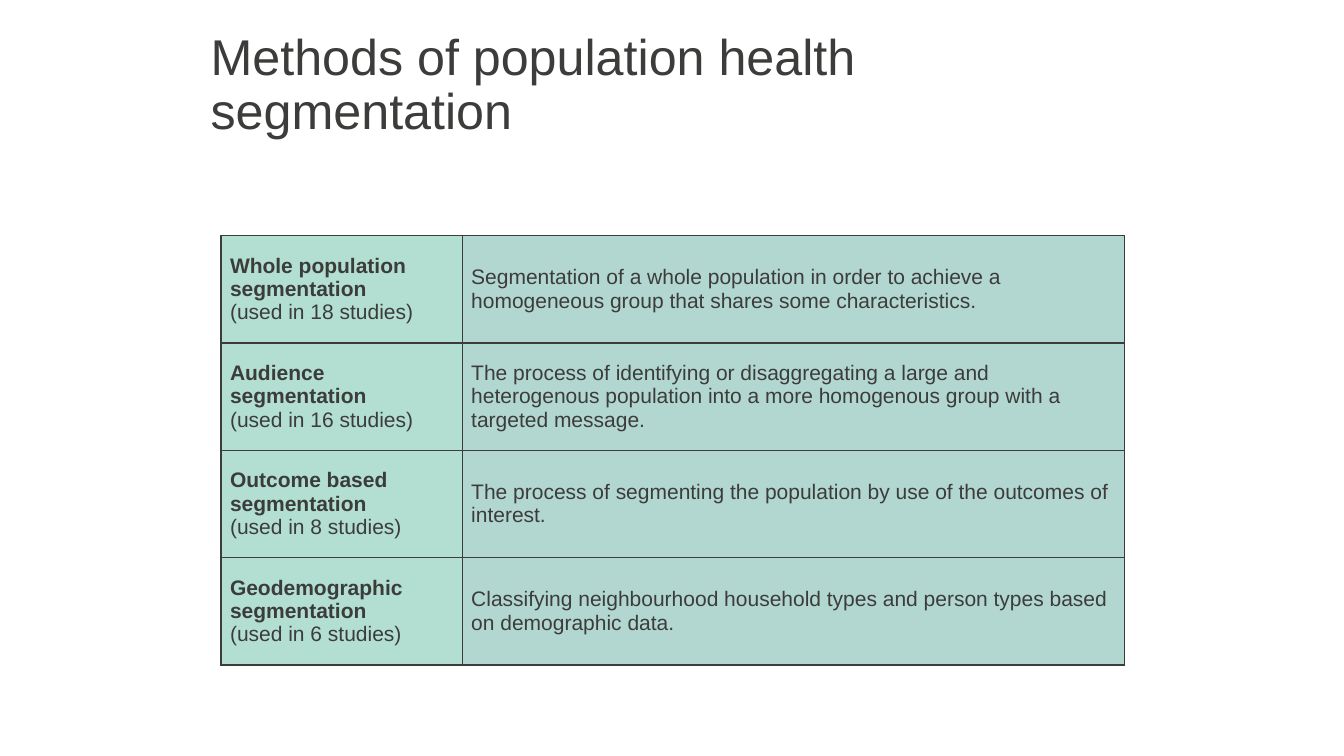
import pptx
import pptx.util
import pptx.dml.color
import pptx.enum.text
import pptx.oxml
import pptx.oxml.ns
from lxml import etree

Pt = pptx.util.Pt
ANCHOR = pptx.enum.text.MSO_ANCHOR
COLORS = {"text": "3C3C3B", "method": "00966C", "description": "B2D7D0"}

METHODS = [
    ("Whole population segmentation", 18,
     "Segmentation of a whole population in order to achieve a homogeneous "
     "group that shares some characteristics."),
    ("Audience segmentation", 16,
     "The process of identifying or disaggregating a large and heterogenous "
     "population into a more homogenous group with a targeted message."),
    ("Outcome based segmentation", 8,
     "The process of segmenting the population by use of the outcomes of interest."),
    ("Geodemographic segmentation", 6,
     "Classifying neighbourhood household types and person types based on "
     "demographic data."),
]


class SlideBuilder:
    """Holds the text style and the current page."""

    def __init__(self, page, font="Arial"):
        self.page = page
        self.font = font

    def style(self, para, size, bold_first=False):
        for index, span in enumerate(para.runs):
            span.font.name = self.font
            span.font.size = Pt(size)
            span.font.bold = bold_first and index == 0
            span.font.color.rgb = pptx.dml.color.RGBColor.from_string(COLORS["text"])

    def title(self, text, left, top, width, height, size):
        box = self.page.shapes.add_textbox(Pt(left), Pt(top), Pt(width), Pt(height))
        frame = box.text_frame
        frame.text = text
        frame.word_wrap = True
        frame.vertical_anchor = ANCHOR.MIDDLE
        frame.margin_left = frame.margin_right = frame.margin_top = 0
        frame.margin_bottom = Pt(39)
        para = frame.paragraphs[0]
        para.line_spacing = 0.9
        self.style(para, size)

    def borders(self, cell, width=1):
        properties = cell._tc.get_or_add_tcPr()
        for side in ("lnL", "lnR", "lnT", "lnB"):
            line = etree.SubElement(properties, pptx.oxml.ns.qn(f"a:{side}"),
                                    w=str(Pt(width)))
            fill = etree.SubElement(line, pptx.oxml.ns.qn("a:solidFill"))
            etree.SubElement(fill, pptx.oxml.ns.qn("a:srgbClr"), val=COLORS["text"])

    def cell(self, cell, text, color, opacity=100, bold_first=False):
        self.borders(cell)
        cell.fill.solid()
        cell.fill.fore_color.rgb = pptx.dml.color.RGBColor.from_string(COLORS[color])
        if opacity < 100:
            tint = cell._tc.tcPr.find(pptx.oxml.ns.qn("a:solidFill"))[0]
            etree.SubElement(tint, pptx.oxml.ns.qn("a:alpha"), val=str(opacity * 1000))
        cell.vertical_anchor = ANCHOR.MIDDLE
        cell.margin_left = cell.margin_right = Pt(6.5)
        cell.margin_top = cell.margin_bottom = Pt(6.5)
        para = cell.text_frame.paragraphs[0]
        para.text = text
        para.space_after = Pt(6)
        self.style(para, 15, bold_first)

    def table(self, methods, left, top, widths, row_height):
        frame = self.page.shapes.add_table(
            len(methods), len(widths), Pt(left), Pt(top),
            Pt(sum(widths)), Pt(row_height * len(methods)))
        table = frame.table
        table.first_row = table.horz_banding = False
        for column, width in zip(table.columns, widths):
            column.width = Pt(width)
        for index, (name, studies, description) in enumerate(methods):
            table.rows[index].height = Pt(row_height)
            self.cell(table.cell(index, 0), f"{name}\v(used in {studies} studies)",
                      "method", opacity=30, bold_first=True)
            self.cell(table.cell(index, 1), description, "description")


def main():
    deck = pptx.Presentation()
    deck.slide_width, deck.slide_height = Pt(960), Pt(540)
    builder = SlideBuilder(deck.slides.add_slide(deck.slide_layouts[6]))

    # Heading
    builder.title("Methods of population health segmentation",
                  150.5, 28.8, 488, 104.4, 35.9)

    # Segmentation methods and their descriptions
    builder.table(METHODS, 157.8, 168.3, (172.3, 473), 76.7)

    deck.save("out.pptx")


if __name__ == "__main__":
    main()
